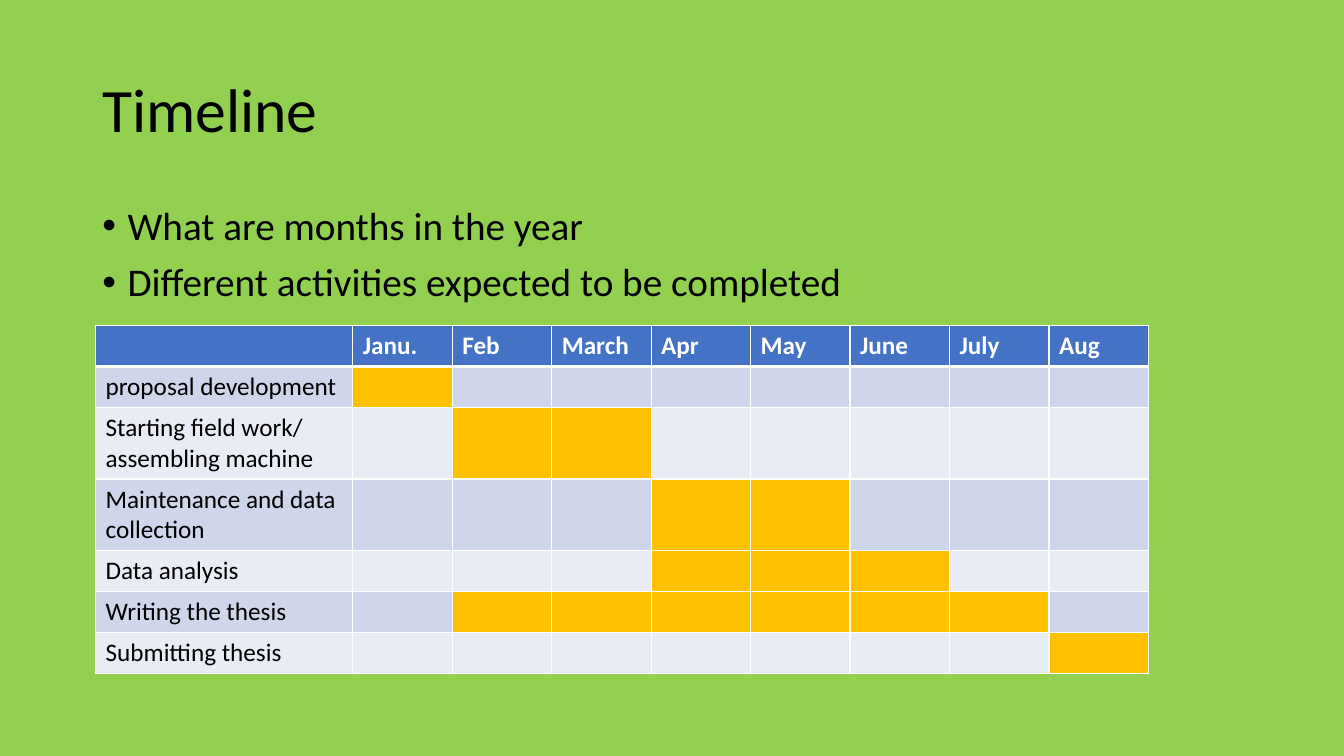
from dataclasses import dataclass

from lxml.etree import SubElement
from pptx import Presentation
from pptx.dml.color import RGBColor
from pptx.enum.text import MSO_ANCHOR as Anchor, MSO_AUTO_SIZE as AutoSize, PP_ALIGN as Align
from pptx.oxml.ns import qn
from pptx.util import Emu, Pt

EMU_PER_PX = 9525
FONT = "Calibri"
BLACK = RGBColor(0x00, 0x00, 0x00)
WHITE = RGBColor(0xFF, 0xFF, 0xFF)
GREEN = RGBColor(0x92, 0xD0, 0x50)
BLUE = RGBColor(0x44, 0x72, 0xC4)
AMBER = RGBColor(0xFF, 0xC0, 0x00)
BANDS = (RGBColor(0xCF, 0xD5, 0xEA), RGBColor(0xE9, 0xEB, 0xF5))

ACTIVITY_WIDTH = 245
MONTHS_WIDTH = 758
ROW_HEIGHT = 39
TABLE_HEIGHT = 329


@dataclass(frozen=True)
class Activity:
    name: str
    first_month: int
    last_month: int


MONTHS = ("Janu.", "Feb", "March", "Apr", "May", "June", "July", "Aug")
ACTIVITIES = (
    Activity("proposal development", 1, 1),
    Activity("Starting field work/ assembling machine", 2, 3),
    Activity("Maintenance and data collection", 4, 5),
    Activity("Data analysis", 4, 6),
    Activity("Writing the thesis", 2, 7),
    Activity("Submitting thesis", 8, 8),
)
EXPECTATIONS = (
    "What are months in the year",
    "Different activities expected to be completed",
)


def px(length: int) -> Emu:
    return Emu(length * EMU_PER_PX)


def place(shape, left: int, top: int, width: int, height: int) -> None:
    shape.left, shape.top = px(left), px(top)
    shape.width, shape.height = px(width), px(height)


def write(paragraph, text: str, *, size: int, color: RGBColor = BLACK,
          bold: bool = False, line_spacing: float = 1.0, space_before: int = 0) -> None:
    paragraph.alignment = Align.LEFT
    paragraph.line_spacing = line_spacing
    paragraph.space_before = Pt(space_before)
    run = paragraph.add_run()
    run.text = text
    run.font.name = FONT
    run.font.size = Pt(size)
    run.font.bold = bold
    run.font.color.rgb = color


def add_bullet(paragraph, indent: int) -> None:
    properties = paragraph._p.get_or_add_pPr()
    properties.set("marL", str(px(indent)))
    properties.set("indent", str(px(-indent)))
    SubElement(properties, qn("a:buFont"), typeface="Arial")
    SubElement(properties, qn("a:buChar"), char="•")


def add_borders(cell, top: int, bottom: int) -> None:
    properties = cell._tc.get_or_add_tcPr()
    for side, points in (("L", 1), ("R", 1), ("T", top), ("B", bottom)):
        line = SubElement(properties, qn(f"a:ln{side}"), w=str(Pt(points)))
        fill = SubElement(line, qn("a:solidFill"))
        SubElement(fill, qn("a:srgbClr"), val=str(WHITE))


def format_cell(cell, fill: RGBColor, text: str = "", *, color: RGBColor = BLACK,
                bold: bool = False, top: int = 1, bottom: int = 1) -> None:
    add_borders(cell, top, bottom)
    cell.fill.solid()
    cell.fill.fore_color.rgb = fill
    if text:
        write(cell.text_frame.paragraphs[0], text, size=18, color=color, bold=bold)


def add_title(slide) -> None:
    title = slide.shapes.title
    place(title, 88, 38, 1104, 139)
    title.text_frame.vertical_anchor = Anchor.MIDDLE
    title.text_frame.auto_size = AutoSize.NONE
    write(title.text_frame.paragraphs[0], "Timeline", size=44, line_spacing=0.9)


def add_expectations(slide) -> None:
    body = slide.placeholders[1]
    place(body, 88, 192, 1104, 457)
    frame = body.text_frame
    frame.auto_size = AutoSize.NONE
    for index, text in enumerate(EXPECTATIONS):
        paragraph = frame.add_paragraph() if index else frame.paragraphs[0]
        write(paragraph, text, size=28, line_spacing=0.9, space_before=10)
        add_bullet(paragraph, 24)


def add_schedule(slide) -> None:
    graphic_frame = slide.shapes.add_table(
        len(ACTIVITIES) + 1, len(MONTHS) + 1, px(91), px(310),
        px(ACTIVITY_WIDTH + MONTHS_WIDTH), px(TABLE_HEIGHT))
    table = graphic_frame.table
    table.first_row = table.horz_banding = False
    for column in table.columns:
        column.width = px(MONTHS_WIDTH) // len(MONTHS)
    table.columns[0].width = px(ACTIVITY_WIDTH)
    for row in table.rows:
        row.height = px(ROW_HEIGHT)
    graphic_frame.height = px(TABLE_HEIGHT)

    for column, month in enumerate(("",) + MONTHS):
        format_cell(table.cell(0, column), BLUE, month, color=WHITE, bold=True, bottom=3)
    for row, activity in enumerate(ACTIVITIES, start=1):
        band = BANDS[(row - 1) % 2]
        top = 3 if row == 1 else 1
        format_cell(table.cell(row, 0), band, activity.name, top=top)
        for month in range(1, len(MONTHS) + 1):
            active = activity.first_month <= month <= activity.last_month
            format_cell(table.cell(row, month), AMBER if active else band, top=top)


def main() -> None:
    presentation = Presentation()
    presentation.slide_width, presentation.slide_height = px(1280), px(720)
    slide = presentation.slides.add_slide(presentation.slide_layouts[1])
    slide.background.fill.solid()
    slide.background.fill.fore_color.rgb = GREEN
    add_title(slide)
    add_expectations(slide)
    add_schedule(slide)
    presentation.save("out.pptx")


if __name__ == "__main__":
    main()
